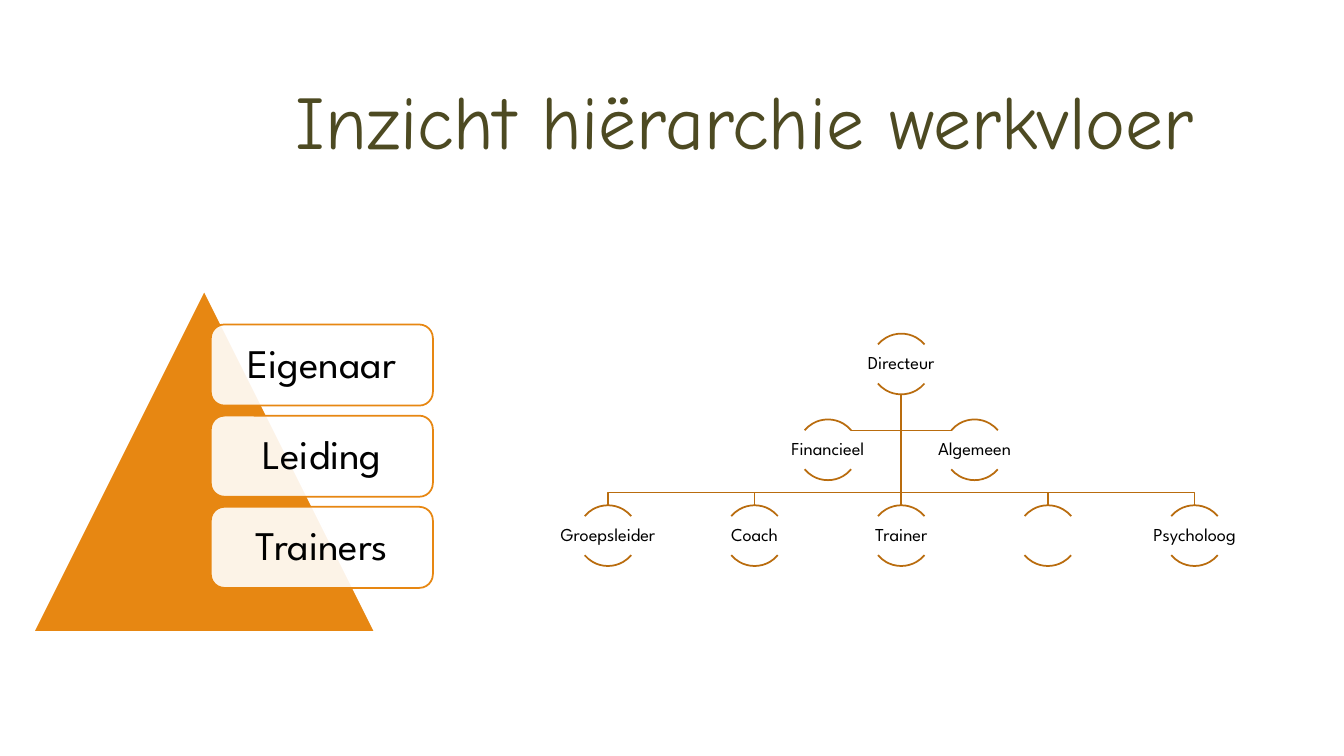
from lxml.etree import SubElement
from pptx import Presentation
from pptx.dml.color import RGBColor
from pptx.enum.shapes import MSO_CONNECTOR as Connector, MSO_SHAPE as Shape
from pptx.enum.text import MSO_ANCHOR as Anchor, MSO_AUTO_SIZE as AutoSize, PP_ALIGN as Align
from pptx.oxml.ns import qn
from pptx.util import Pt

OLIVE = RGBColor(0x4D, 0x4A, 0x22)
ORANGE = RGBColor(0xE7, 0x87, 0x12)
BROWN = RGBColor(0xB9, 0x6C, 0x0E)
WHITE = RGBColor(0xFF, 0xFF, 0xFF)
BLACK = RGBColor(0, 0, 0)

TITLE_FONT = "Comic Neue"
BODY_FONT = "League Spartan"
LINE_WIDTH = 1.25

PYRAMID_LEVELS = ["Eigenaar", "Leiding", "Trainers"]
ASSISTANTS = {-0.5: "Financieel", 0.5: "Algemeen"}
TEAM = {-2: "Groepsleider", -1: "Coach", 0: "Trainer", 1: "", 2: "Psycholoog"}

TRUNK_X = 643.75
COLUMN_PITCH = 104.75
DIRECTOR_Y = 260
ROW_PITCH = 61.3
NODE_SIZE = 43.4
TRUNK_TOP = DIRECTOR_Y + NODE_SIZE / 2
TEAM_Y = DIRECTOR_Y + 2 * ROW_PITCH
TEAM_TOP = TEAM_Y - NODE_SIZE / 2
TEAM_BAR_Y = TEAM_TOP - 9
ASSISTANT_BAR_Y = 307.4
ASSISTANT_REACH = 36


def column_x(column):
    return TRUNK_X + column * COLUMN_PITCH


def style_line(line, color):
    line.color.rgb = color
    line.width = Pt(LINE_WIDTH)


def set_text(shape, text, font_name, size, color, align, anchor, margin):
    frame = shape.text_frame
    frame.text = text
    frame.word_wrap = True
    frame.auto_size = AutoSize.NONE
    frame.vertical_anchor = anchor
    frame.margin_left = frame.margin_right = Pt(margin)
    frame.margin_top = frame.margin_bottom = Pt(margin)
    paragraph = frame.paragraphs[0]
    paragraph.alignment = align
    font = paragraph.runs[0].font
    font.name = font_name
    font.size = Pt(size)
    font.color.rgb = color
    return paragraph


def add_title(slide, text):
    title = slide.shapes.title
    title.left, title.top, title.width, title.height = Pt(204.2), Pt(49.1), Pt(702), Pt(100.8)
    set_text(title, text, TITLE_FONT, 54, OLIVE, Align.LEFT, Anchor.TOP, 3.6)
    title.text_frame.margin_left = title.text_frame.margin_right = Pt(7.2)


def add_preset(slide, kind, left, top, width, height, line_color):
    shape = slide.shapes.add_shape(kind, Pt(left), Pt(top), Pt(width), Pt(height))
    shape.shadow.inherit = False
    style_line(shape.line, line_color)
    return shape


def add_level(slide, text, top):
    level = add_preset(slide, Shape.ROUNDED_RECTANGLE, 150.6, top, 158.6, 57.9, ORANGE)
    level.fill.solid()
    level.fill.fore_color.rgb = WHITE
    color = level.fill._xPr.find(qn("a:solidFill"))[0]
    SubElement(color, qn("a:alpha"), val="90000")
    paragraph = set_text(level, text, BODY_FONT, 29, BLACK, Align.CENTER, Anchor.MIDDLE, 8.7)
    paragraph.line_spacing = 0.9


def add_pyramid(slide):
    triangle = add_preset(slide, Shape.ISOSCELES_TRIANGLE, 25.2, 209.1, 241.7, 241.7, WHITE)
    triangle.left, triangle.top = Pt(23.8), Pt(207.4)
    triangle.width = triangle.height = Pt(244.1)
    triangle.fill.solid()
    triangle.fill.fore_color.rgb = ORANGE
    for index, text in enumerate(PYRAMID_LEVELS):
        add_level(slide, text, 231.8 + index * 65.1)


def add_branch(slide, points):
    points = [(Pt(x), Pt(y)) for x, y in points]
    builder = slide.shapes.build_freeform(*points[0])
    builder.add_line_segments(points[1:], close=False)
    branch = builder.convert_to_shape()
    branch.shadow.inherit = False
    branch.fill.background()
    style_line(branch.line, BROWN)


def add_trunk(slide):
    trunk = slide.shapes.add_connector(
        Connector.STRAIGHT, Pt(TRUNK_X), Pt(TRUNK_TOP), Pt(TRUNK_X), Pt(TEAM_TOP))
    style_line(trunk.line, BROWN)
    SubElement(trunk._element.spPr, qn("a:effectLst"))


def add_node(slide, text, x, y):
    for start, end in ((132, 192), (24, 84)):
        arc = add_preset(slide, Shape.ARC, x - NODE_SIZE / 2, y - NODE_SIZE / 2,
                         NODE_SIZE, NODE_SIZE, BROWN)
        arc.fill.background()
        arc.adjustments[0] = start
        arc.adjustments[1] = end
    if text:
        label = slide.shapes.add_textbox(Pt(x - 43.2), Pt(y - 13.9), Pt(86.4), Pt(27.4))
        paragraph = set_text(label, text, BODY_FONT, 13, BLACK, Align.CENTER, Anchor.MIDDLE, 0.7)
        paragraph.line_spacing = 0.9


def add_organisation(slide):
    for side in (1, -1):
        add_branch(slide, [(TRUNK_X, TRUNK_TOP), (TRUNK_X, ASSISTANT_BAR_Y),
                           (TRUNK_X + side * ASSISTANT_REACH, ASSISTANT_BAR_Y)])
    for column in TEAM:
        if column:
            x = column_x(column)
            add_branch(slide, [(TRUNK_X, TRUNK_TOP), (TRUNK_X, TEAM_BAR_Y),
                               (x, TEAM_BAR_Y), (x, TEAM_TOP)])
    add_trunk(slide)
    add_node(slide, "Directeur", TRUNK_X, DIRECTOR_Y)
    for column, text in TEAM.items():
        add_node(slide, text, column_x(column), TEAM_Y)
    for column, text in ASSISTANTS.items():
        add_node(slide, text, column_x(column), DIRECTOR_Y + ROW_PITCH)


def main():
    presentation = Presentation()
    presentation.slide_width, presentation.slide_height = Pt(960), Pt(540)
    slide = presentation.slides.add_slide(presentation.slide_layouts[5])
    add_title(slide, "Inzicht hiërarchie werkvloer")
    add_pyramid(slide)
    add_organisation(slide)
    presentation.save("out.pptx")


if __name__ == "__main__":
    main()
